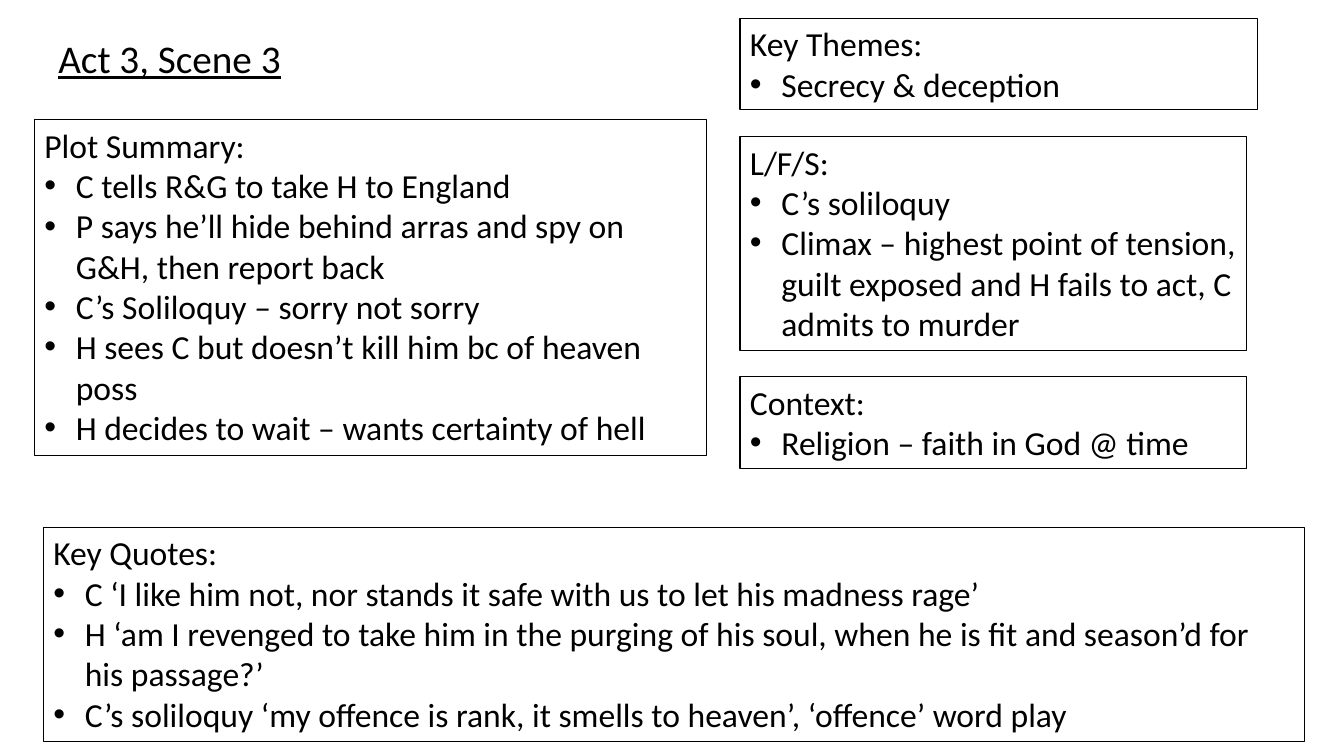
from dataclasses import dataclass

from lxml.etree import SubElement
from pptx import Presentation
from pptx.dml.color import RGBColor
from pptx.enum.text import MSO_AUTO_SIZE as AutoSize
from pptx.oxml.ns import qn
from pptx.util import Pt

COLORS = {"ink": "000000", "page": "FFFFFF"}
FONT = "Calibri"
TITLE_SIZE = 28
NOTE_SIZE = 24
BULLET_INDENT = 22.5
RIGHT_COLUMN = 528.6


@dataclass(frozen=True)
class Note:
    heading: str
    points: tuple[str, ...]
    left: float
    top: float
    width: float
    height: float


NOTES = (
    Note(
        "Key Quotes:",
        (
            "C ‘I like him not, nor stands it safe with us to let his madness rage’",
            "H ‘am I revenged to take him in the purging of his soul, "
            "when he is fit and season’d for his passage?’",
            "C’s soliloquy ‘my offence is rank, it smells to heaven’, ‘offence’ word play",
        ),
        31, 376.7, 900.5, 152.7,
    ),
    Note("Key Themes:", ("Secrecy & deception",), RIGHT_COLUMN, 13, 369.7, 65.4),
    Note(
        "L/F/S:",
        (
            "C’s soliloquy",
            "Climax – highest point of tension, guilt exposed and H fails to act, "
            "C admits to murder",
        ),
        RIGHT_COLUMN, 97.5, 361.7, 152.7,
    ),
    Note("Context:", ("Religion – faith in God @ time",), RIGHT_COLUMN, 269, 361.7, 65.4),
    Note(
        "Plot Summary:",
        (
            "C tells R&G to take H to England",
            "P says he’ll hide behind arras and spy on G&H, then report back",
            "C’s Soliloquy – sorry not sorry",
            "H sees C but doesn’t kill him bc of heaven poss",
            "H decides to wait – wants certainty of hell",
        ),
        24.6, 85.5, 480.2, 239.9,
    ),
)


def color(name: str) -> RGBColor:
    return RGBColor.from_string(COLORS[name])


def format_text(frame, size: float) -> None:
    for para in frame.paragraphs:
        for span in para.runs:
            span.font.name = FONT
            span.font.size = Pt(size)
            span.font.color.rgb = color("ink")


def add_bullet(para) -> None:
    properties = para._p.get_or_add_pPr()
    properties.set("marL", str(Pt(BULLET_INDENT)))
    properties.set("indent", str(-Pt(BULLET_INDENT)))
    SubElement(properties, qn("a:buFont"), typeface="Arial")
    SubElement(properties, qn("a:buChar"), char="•")


def add_title(page, text: str) -> None:
    box = page.shapes.add_textbox(Pt(34.6), Pt(21), Pt(175.7), Pt(41.2))
    frame = box.text_frame
    frame.text = text
    frame.word_wrap = False
    frame.auto_size = AutoSize.SHAPE_TO_FIT_TEXT
    format_text(frame, TITLE_SIZE)
    frame.paragraphs[0].runs[0].font.underline = True


def add_note(page, note: Note) -> None:
    box = page.shapes.add_textbox(
        Pt(note.left), Pt(note.top), Pt(note.width), Pt(note.height)
    )
    box.line.color.rgb = color("ink")
    box.line.width = Pt(0.75)
    frame = box.text_frame
    frame.text = "\n".join((note.heading, *note.points))
    frame.word_wrap = True
    frame.auto_size = AutoSize.SHAPE_TO_FIT_TEXT
    for para in frame.paragraphs[1:]:
        add_bullet(para)
    format_text(frame, NOTE_SIZE)


def main() -> None:
    deck = Presentation()
    deck.slide_width, deck.slide_height = Pt(960), Pt(540)
    page = deck.slides.add_slide(deck.slide_layouts[6])
    page.background.fill.solid()
    page.background.fill.fore_color.rgb = color("page")
    add_title(page, "Act 3, Scene 3")
    for note in NOTES:
        add_note(page, note)
    deck.save("out.pptx")


if __name__ == "__main__":
    main()
